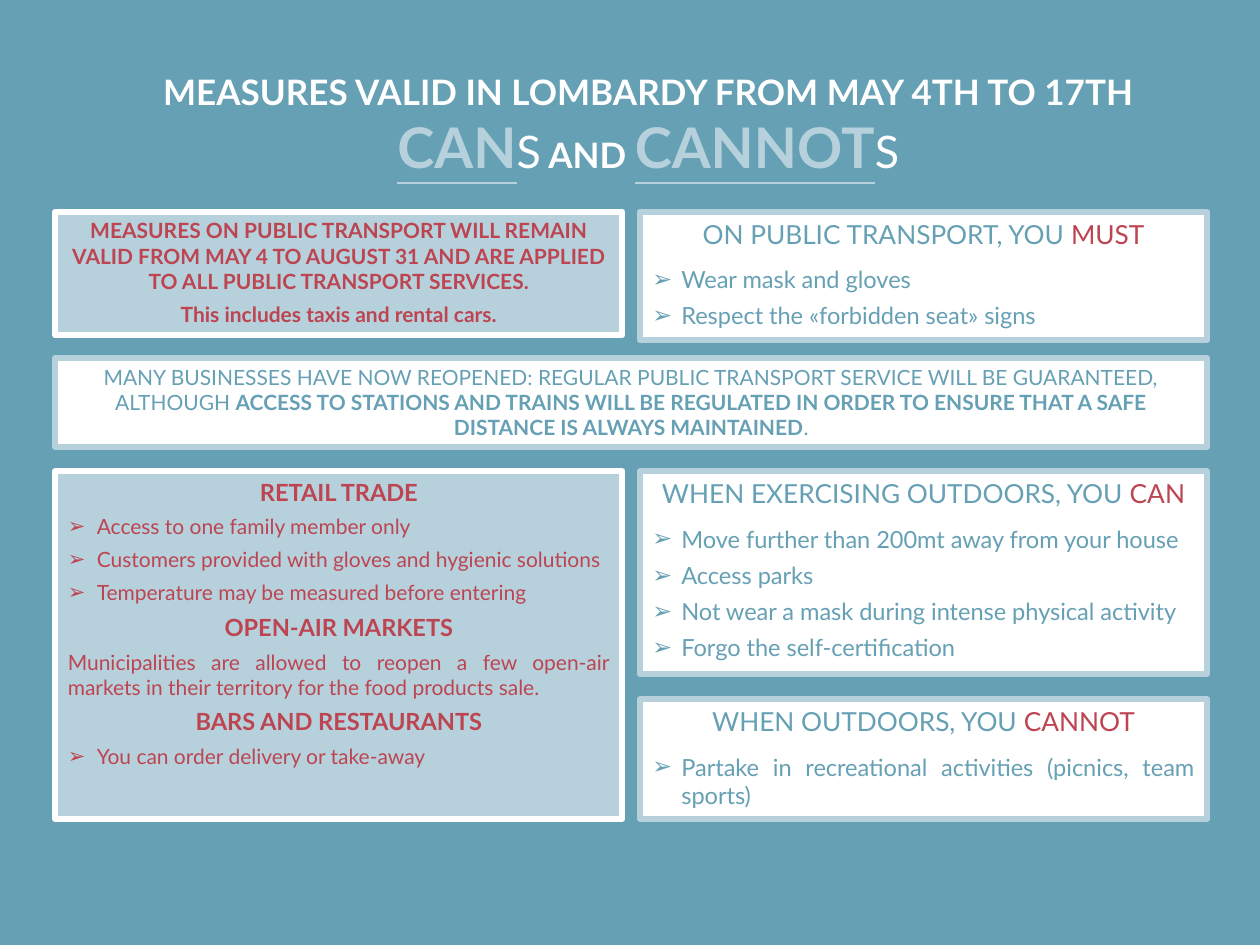
from dataclasses import dataclass
from lxml.etree import SubElement
from pptx import Presentation
from pptx.dml.color import RGBColor
from pptx.enum.shapes import MSO_SHAPE
from pptx.enum.text import MSO_ANCHOR, MSO_AUTO_SIZE, PP_ALIGN
from pptx.oxml.ns import qn
from pptx.util import Inches, Pt

TEAL, PALE, RED, WHITE = "66A0B4", "B6D1DC", "BD4451", "FFFFFF"
FONT = "Lato"
MID, JUST, LEFT = PP_ALIGN.CENTER, PP_ALIGN.JUSTIFY, PP_ALIGN.LEFT

# Two equal columns between the margins
EDGE, COL, GAP = 0.44, 4.5, 0.14
INDENT, SPACE = 0.23, 4.5


@dataclass
class Run:
    text: str
    color: str
    size: float
    bold: bool = False
    line: bool = False
    small: bool = False


@dataclass
class Para:
    runs: list[Run]
    align: PP_ALIGN = MID
    bullet: bool = False
    before: float = SPACE
    after: float = 0


@dataclass
class Card:
    col: int
    span: int
    top: float
    height: float
    fill: str
    edge: str
    paras: list[Para]


def rgb(code: str) -> RGBColor:
    return RGBColor.from_string(code)


def add_run(para, run: Run) -> None:
    part = para.add_run()
    part.text = run.text
    font = part.font
    font.name, font.size = FONT, Pt(run.size)
    font.bold, font.underline = run.bold, run.line
    font.color.rgb = rgb(run.color)
    if run.small:
        font._element.set("cap", "small")


def add_bullet(para) -> None:
    props = para._p.get_or_add_pPr()
    props.set("marL", str(Inches(INDENT)))
    props.set("indent", str(-Inches(INDENT)))
    SubElement(props, qn("a:buFont")).set("typeface", "Arial")
    SubElement(props, qn("a:buChar")).set("char", "➢")


def write(frame, paras: list[Para]) -> None:
    frame.word_wrap = True
    frame.auto_size = MSO_AUTO_SIZE.NONE
    frame.vertical_anchor = MSO_ANCHOR.TOP
    for i, item in enumerate(paras):
        para = frame.add_paragraph() if i else frame.paragraphs[0]
        para.alignment = item.align
        para.space_before = Pt(item.before if i else 0)
        para.space_after = Pt(item.after)
        if item.bullet:
            add_bullet(para)
        for run in item.runs:
            add_run(para, run)


def draw(slide, card: Card) -> None:
    left = EDGE + card.col * (COL + GAP)
    width = card.span * COL + (card.span - 1) * GAP
    box = slide.shapes.add_shape(
        MSO_SHAPE.RECTANGLE, Inches(left), Inches(card.top),
        Inches(width), Inches(card.height))
    box.shadow.inherit = False
    box.fill.solid()
    box.fill.fore_color.rgb = rgb(card.fill)
    box.line.color.rgb = rgb(card.edge)
    box.line.width = Pt(3.5)
    write(box.text_frame, card.paras)


def red_head(text: str, size: float = 13.5) -> Para:
    return Para([Run(text, RED, size, True)])


def red_items(*texts: str) -> list[Para]:
    return [Para([Run(t, RED, 12)], LEFT, True) for t in texts]


def rules(top: float, height: float, lead: str, verb: str, *texts: str) -> Card:
    """White card in the right column: heading with a red verb, then bullets."""
    head = Para([Run(lead, TEAL, 15), Run(verb, RED, 15)], after=SPACE)
    items = [Para([Run(t, TEAL, 13.5)], JUST, True) for t in texts]
    return Card(1, 1, top, height, WHITE, PALE, [head, *items])


TITLE = [
    Para([Run("MEASURES VALID IN LOMBARDY FROM MAY 4TH TO 17TH", WHITE, 20, True)]),
    Para([
        Run("CAN", PALE, 32, True, line=True),
        Run("s", WHITE, 32, small=True),
        Run(" AND ", WHITE, 20, True),
        Run("CANNOT", PALE, 32, True, line=True),
        Run("s", WHITE, 32, small=True),
    ], before=0),
]

CARDS = [
    Card(0, 1, 1.68, 0.98, PALE, WHITE, [
        red_head("MEASURES ON PUBLIC TRANSPORT WILL REMAIN VALID FROM MAY 4 TO "
                 "AUGUST 31 AND ARE APPLIED TO ALL PUBLIC TRANSPORT SERVICES.", 12),
        red_head("This includes taxis and rental cars.", 12),
    ]),
    rules(1.68, 1.02, "ON PUBLIC TRANSPORT, YOU ", "MUST",
          "Wear mask and gloves", "Respect the «forbidden seat» signs"),
    Card(0, 2, 2.84, 0.71, WHITE, PALE, [Para([
        Run("MANY BUSINESSES HAVE NOW REOPENED: REGULAR PUBLIC TRANSPORT "
            "SERVICE WILL BE GUARANTEED, ALTHOUGH ", TEAL, 12),
        Run("ACCESS TO STATIONS AND TRAINS WILL BE REGULATED IN ORDER TO "
            "ENSURE THAT A SAFE DISTANCE IS ALWAYS MAINTAINED", TEAL, 12, True),
        Run(".", TEAL, 12),
    ])]),
    Card(0, 1, 3.74, 2.76, PALE, WHITE, [
        red_head("RETAIL TRADE"),
        *red_items("Access to one family member only",
                   "Customers provided with gloves and hygienic solutions",
                   "Temperature may be measured before entering"),
        red_head("OPEN-AIR MARKETS"),
        Para([Run("Municipalities are allowed to reopen a few open-air markets "
                  "in their territory for the food products sale.", RED, 12)], JUST),
        red_head("BARS AND RESTAURANTS"),
        *red_items("You can order delivery or take-away"),
    ]),
    rules(3.74, 1.61, "WHEN EXERCISING OUTDOORS, YOU ", "CAN",
          "Move further than 200mt away from your house", "Access parks",
          "Not wear a mask during intense physical activity",
          "Forgo the self-certification"),
    rules(5.55, 0.95, "WHEN OUTDOORS, YOU ", "CANNOT",
          "Partake in recreational activities (picnics, team sports)"),
]


def main() -> None:
    deck = Presentation()
    deck.slide_width, deck.slide_height = Inches(10), Inches(7.5)
    slide = deck.slides.add_slide(deck.slide_layouts[5])
    back = slide.background.fill
    back.solid()
    back.fore_color.rgb = rgb(TEAL)
    title = slide.shapes.title
    title.left, title.top = Inches(0.49), Inches(0.51)
    title.width, title.height = Inches(9.31), Inches(0.98)
    write(title.text_frame, TITLE)
    for card in CARDS:
        draw(slide, card)
    deck.save("out.pptx")


if __name__ == "__main__":
    main()
